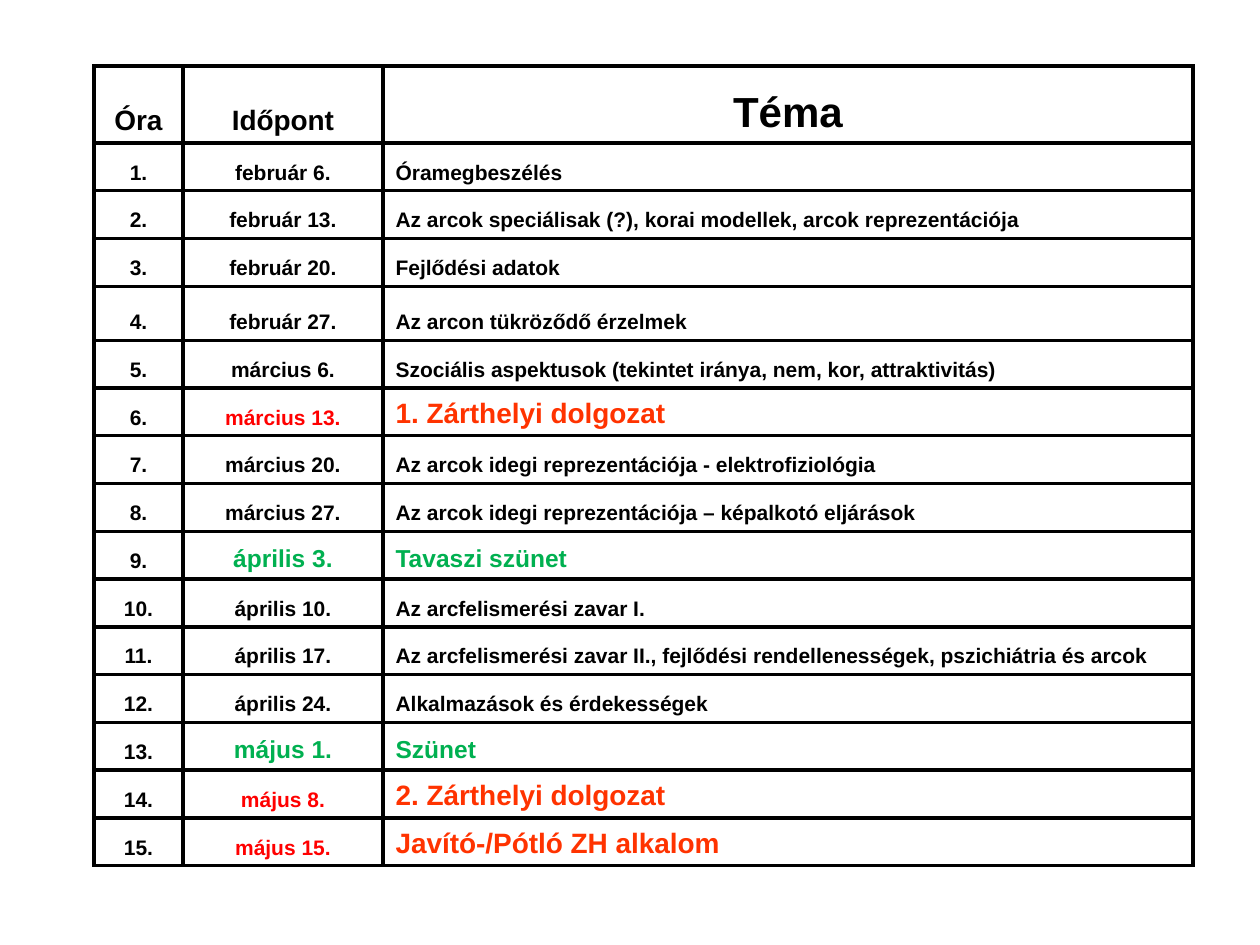
from dataclasses import dataclass

from lxml import etree
from pptx import Presentation, util as u
from pptx.dml.color import RGBColor
from pptx.enum import text
from pptx.oxml import ns

HEADINGS = [("Óra", "heading"), ("Időpont", "heading"), ("Téma", "title")]

# date, topic, kind of lesson
LESSONS = [
    ("február 6.", "Óramegbeszélés", "lecture"),
    ("február 13.", "Az arcok speciálisak (?), korai modellek, arcok reprezentációja", "lecture"),
    ("február 20.", "Fejlődési adatok", "lecture"),
    ("február 27.", "Az arcon tükröződő érzelmek", "lecture"),
    ("március 6.", "Szociális aspektusok (tekintet iránya, nem, kor, attraktivitás)", "lecture"),
    ("március 13.", "1. Zárthelyi dolgozat", "test"),
    ("március 20.", "Az arcok idegi reprezentációja - elektrofiziológia", "lecture"),
    ("március 27.", "Az arcok idegi reprezentációja – képalkotó eljárások", "lecture"),
    ("április 3.", "Tavaszi szünet", "break"),
    ("április 10.", "Az arcfelismerési zavar I.", "lecture"),
    ("április 17.", "Az arcfelismerési zavar II., fejlődési rendellenességek, pszichiátria és arcok",
     "lecture"),
    ("április 24.", "Alkalmazások és érdekességek", "lecture"),
    ("május 1.", "Szünet", "break"),
    ("május 8.", "2. Zárthelyi dolgozat", "test"),
    ("május 15.", "Javító-/Pótló ZH alkalom", "test"),
]


@dataclass(frozen=True)
class Theme:
    font: str = "Arial"
    black: str = "000000"
    red: str = "FF0000"
    orange: str = "FF3300"
    green: str = "00B050"
    title: int = 24
    heading: int = 16
    holiday: int = 14
    body: int = 12
    border: float = 2.25


THEME = Theme()
STYLES = {
    "title": (THEME.title, THEME.black),
    "heading": (THEME.heading, THEME.black),
    "body": (THEME.body, THEME.black),
    "test date": (THEME.body, THEME.red),
    "test topic": (THEME.heading, THEME.orange),
    "break": (THEME.holiday, THEME.green),
}
# kind of lesson: style of date, style of topic
LESSON_STYLES = {
    "lecture": ("body", "body"),
    "test": ("test date", "test topic"),
    "break": ("break", "break"),
}

PX = u.Inches(1) / 126
SLIDE_WIDTH, SLIDE_HEIGHT = 1260, 945
LEFT, TOP, HEIGHT = 94, 66, 800
COLUMN_WIDTHS = [89, 200, 810]
HEADER_HEIGHT = 77
TALL_LESSON, TALL_HEIGHT = 4, 54
HANGING = 47


def px(value):
    return u.Emu(round(value * PX))


def row_heights():
    """The lessons share evenly what the header and the tall row leave."""
    regular = (HEIGHT - HEADER_HEIGHT - TALL_HEIGHT) / (len(LESSONS) - 1)
    heights = [HEADER_HEIGHT] + [regular] * len(LESSONS)
    heights[TALL_LESSON] = TALL_HEIGHT
    return heights


def add_borders(cell):
    properties = cell._tc.get_or_add_tcPr()
    for position, side in enumerate(("lnL", "lnR", "lnT", "lnB")):
        line = etree.Element(ns.qn(f"a:{side}"), w=str(u.Pt(THEME.border)))
        fill = etree.SubElement(line, ns.qn("a:solidFill"))
        etree.SubElement(fill, ns.qn("a:srgbClr"), val=THEME.black)
        properties.insert(position, line)


def fill_cell(cell, words, style, centred):
    size, colour = STYLES[style]
    cell.fill.background()
    add_borders(cell)
    cell.vertical_anchor = text.MSO_ANCHOR.BOTTOM
    paragraph = cell.text_frame.paragraphs[0]
    paragraph.alignment = text.PP_ALIGN.CENTER if centred else text.PP_ALIGN.LEFT
    indents = paragraph._p.get_or_add_pPr()
    indents.set("marL", str(px(HANGING)))
    indents.set("indent", str(-px(HANGING)))
    run = paragraph.add_run()
    run.text = words
    run.font.name = THEME.font
    run.font.size = u.Pt(size)
    run.font.bold = True
    run.font.color.rgb = RGBColor.from_string(colour)


def table_rows():
    yield HEADINGS
    for number, (date, topic, kind) in enumerate(LESSONS, 1):
        date_style, topic_style = LESSON_STYLES[kind]
        yield [(f"{number}.", "body"), (date, date_style), (topic, topic_style)]


def add_schedule(slide):
    heights = row_heights()
    table = slide.shapes.add_table(
        len(heights), len(COLUMN_WIDTHS),
        px(LEFT), px(TOP), px(sum(COLUMN_WIDTHS)), px(HEIGHT)).table
    table.first_row = table.horz_banding = False
    for column, width in zip(table.columns, COLUMN_WIDTHS):
        column.width = px(width)
    for row, height in zip(table.rows, heights):
        row.height = px(height)
    for r, row in enumerate(table_rows()):
        for c, (words, style) in enumerate(row):
            fill_cell(table.cell(r, c), words, style, centred=r == 0 or c < 2)


def main():
    presentation = Presentation()
    presentation.slide_width = px(SLIDE_WIDTH)
    presentation.slide_height = px(SLIDE_HEIGHT)
    add_schedule(presentation.slides.add_slide(presentation.slide_layouts[6]))
    presentation.save("out.pptx")


if __name__ == "__main__":
    main()
